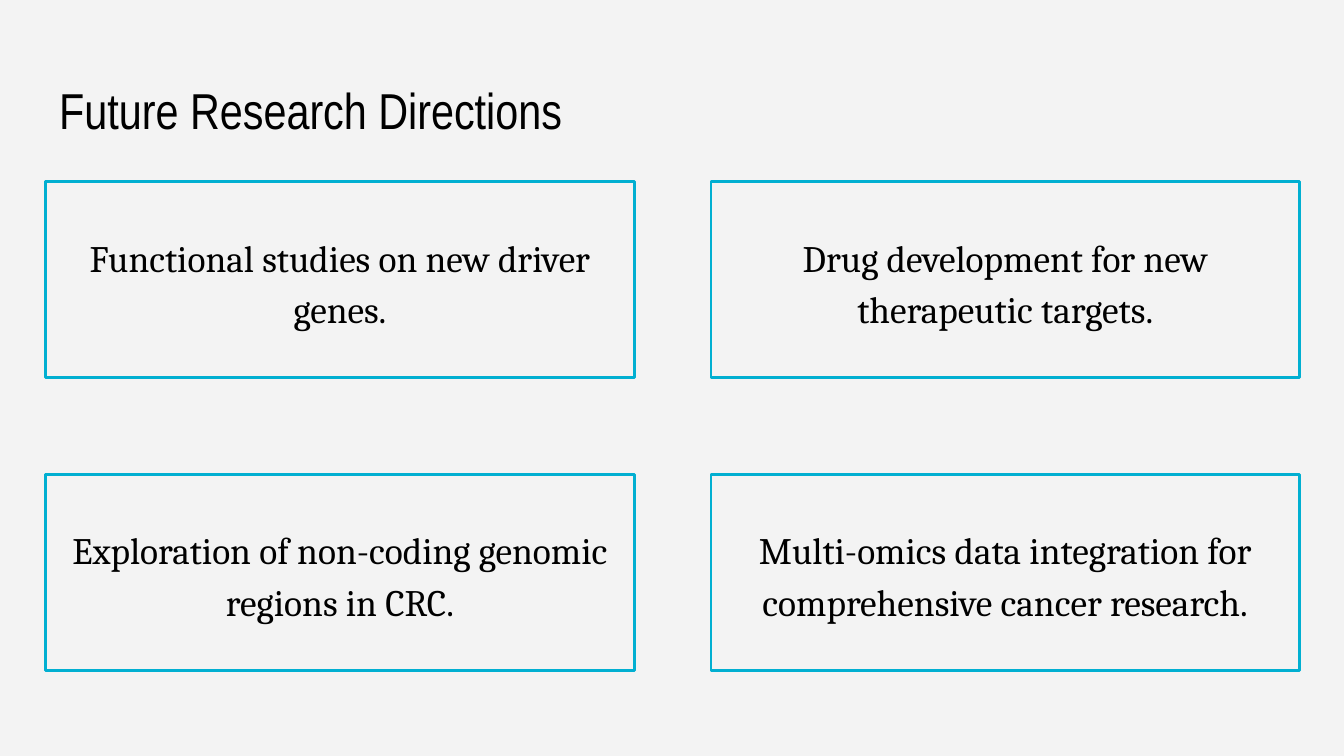
from pptx import Presentation
from pptx.dml.color import RGBColor
from pptx.enum.shapes import MSO_SHAPE
from pptx.enum.text import MSO_ANCHOR, PP_ALIGN
from pptx.util import Inches, Pt

RECT = MSO_SHAPE.RECTANGLE
TOP, MIDDLE = MSO_ANCHOR.TOP, MSO_ANCHOR.MIDDLE
LEFT, CENTER = PP_ALIGN.LEFT, PP_ALIGN.CENTER

COLORS = {"background": "F3F3F3", "border": "01AFD1", "text": "000000"}

# 16:9 slide and grid of cards, in inches
SLIDE_W = 10
SLIDE_H = SLIDE_W * 9 / 16
MARGIN, GRID_TOP = 0.34, 1.35
CARD_W, CARD_H = 4.38, 1.46
COL_STEP, ROW_STEP = 4.95, 2.18

CARDS = [
    ["Functional studies on new driver genes.",
     "Drug development for new therapeutic targets."],
    ["Exploration of non-coding genomic regions in CRC.",
     "Multi-omics data integration for comprehensive cancer research."],
]


def color(name):
    return RGBColor.from_string(COLORS[name])


def set_text(sp, text, font, size, anchor, align):
    tf = sp.text_frame
    tf.text = text
    tf.word_wrap = True
    tf.vertical_anchor = anchor
    tf.margin_left = tf.margin_right = Inches(0.1)
    tf.margin_top = tf.margin_bottom = Inches(0.1)
    p = tf.paragraphs[0]
    p.alignment = align
    r = p.runs[0]
    r.font.name = font
    r.font.size = Pt(size)
    r.font.color.rgb = color("text")
    return p


prs = Presentation()
prs.slide_width, prs.slide_height = Inches(SLIDE_W), Inches(SLIDE_H)
s = prs.slides.add_slide(prs.slide_layouts[5])
s.background.fill.solid()
s.background.fill.fore_color.rgb = color("background")

# Title
title = s.shapes.title
title.left, title.top = Inches(MARGIN), Inches(0.49)
title.width, title.height = Inches(SLIDE_W - 2 * MARGIN), Inches(0.63)
set_text(title, "Future Research Directions", "Arial Narrow", 27, TOP, LEFT)

# Outlined cards, two by two
for row, texts in enumerate(CARDS):
    for col, text in enumerate(texts):
        sp = s.shapes.add_shape(
            RECT,
            Inches(MARGIN + col * COL_STEP), Inches(GRID_TOP + row * ROW_STEP),
            Inches(CARD_W), Inches(CARD_H))
        sp.shadow.inherit = False
        sp.fill.background()
        sp.line.color.rgb = color("border")
        sp.line.width = Pt(1.5)
        p = set_text(sp, text, "Cambria", 20, MIDDLE, CENTER)
        p.line_spacing = 1.15
        p.space_before = p.space_after = Pt(12)

prs.save("out.pptx")
